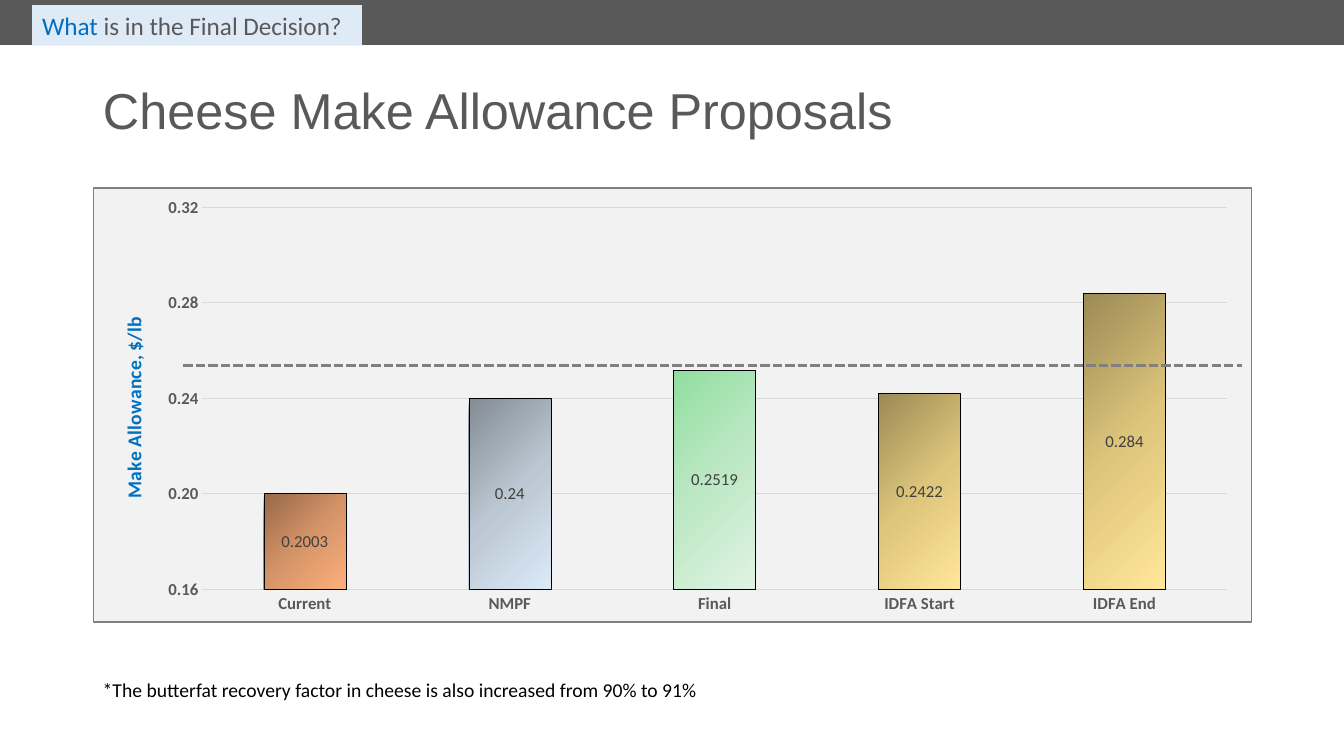
from dataclasses import dataclass

from lxml.etree import SubElement
from pptx import Presentation
from pptx.chart.data import CategoryChartData
from pptx.dml.color import RGBColor
from pptx.enum.chart import XL_CHART_TYPE as ChartType, XL_LABEL_POSITION as LabelPos
from pptx.enum.chart import XL_TICK_MARK as Tick
from pptx.enum.dml import MSO_LINE as Dash
from pptx.enum.shapes import MSO_CONNECTOR as Connector, MSO_SHAPE as Shape
from pptx.enum.text import MSO_ANCHOR as Anchor, PP_ALIGN as Align
from pptx.oxml import parse_xml
from pptx.oxml.ns import nsdecls, qn
from pptx.util import Cm, Pt

GREY, BLUE, BLACK = "595959", "0070C0", "000000"
RULE, BORDER = "D9D9D9", "808080"
LEFT, WIDTH = 2.34, 29.21
GOLD = ("9C8A56", "DDC57B", "FFE699")


@dataclass
class Proposal:
    name: str
    value: float
    shades: tuple[str, str, str]


@dataclass
class Run:
    text: str
    size: int
    color: str
    font: str = "Calibri"


@dataclass
class Label:
    box: tuple[float, float, float, float]
    runs: list[Run]
    fill: str = ""


PROPOSALS = [
    Proposal("Current", 0.2003, ("966849", "D59468", "FDAF7B")),
    Proposal("NMPF", 0.24, ("838B93", "BAC6D1", "DCEBF8")),
    Proposal("Final", 0.2519, ("91DEA0", "BDE8C5", "DFF3E3")),
    Proposal("IDFA Start", 0.2422, GOLD),
    Proposal("IDFA End", 0.284, GOLD),
]
LABELS = [
    Label((LEFT, 16.97, 15.52, 0.86),
          [Run("*The butterfat recovery factor in cheese is also increased from 90% to 91%", 14, BLACK)]),
    Label((0.81, 0.13, 8.31, 1.02),
          [Run("What ", 18, BLUE), Run("is in the Final Decision?", 18, GREY)], "DEEBF7"),
]


def rgb(color: str) -> RGBColor:
    return RGBColor.from_string(color)


def lengths(*values: float) -> list[Cm]:
    return [Cm(v) for v in values]


def style_font(font, size: int, color: str, name: str = "Calibri", bold: bool = False) -> None:
    for key, value in {"size": Pt(size), "name": name, "bold": bold}.items():
        setattr(font, key, value)
    font.color.rgb = rgb(color)


def style_line(line, color: str, width: float) -> None:
    line.color.rgb = rgb(color)
    line.width = Pt(width)


def add_runs(p, runs: list[Run]) -> None:
    for run in runs:
        r = p.add_run()
        r.text = run.text
        style_font(r.font, run.size, run.color, run.font)


def add_label(s, label: Label) -> None:
    sp = s.shapes.add_textbox(*lengths(*label.box))
    if label.fill:
        sp.fill.solid()
        sp.fill.fore_color.rgb = rgb(label.fill)
    sp.text_frame.word_wrap = False
    add_runs(sp.text_frame.paragraphs[0], label.runs)


def set_layout(parent, index: int, **places: float) -> None:
    """Place a chart part by fractions of the chart's size."""
    for old in parent.findall(qn("c:layout")):
        parent.remove(old)
    layout = parse_xml(f"<c:layout {nsdecls('c')}/>")
    manual = SubElement(layout, qn("c:manualLayout"))
    if "w" in places:
        SubElement(manual, qn("c:layoutTarget")).set("val", "inner")
    for key in ("x", "y"):
        SubElement(manual, qn(f"c:{key}Mode")).set("val", "edge")
    for key, value in places.items():
        SubElement(manual, qn(f"c:{key}")).set("val", str(value))
    parent.insert(index, layout)


def shade_point(point, shades: tuple[str, str, str]) -> None:
    style_line(point.format.line, BLACK, 0.25)
    stops = "".join(f'<a:gs pos="{i * 50000}"><a:srgbClr val="{c}"/></a:gs>'
                    for i, c in enumerate(shades))
    grad = parse_xml(f'<a:gradFill {nsdecls("a")}><a:gsLst>{stops}</a:gsLst>'
                     '<a:lin ang="2700000" scaled="0"/></a:gradFill>')
    point.format.line._get_or_add_ln().addprevious(grad)


def style_axes(chart) -> None:
    value_axis, cat_axis = chart.value_axis, chart.category_axis
    for axis in (value_axis, cat_axis):
        axis.major_tick_mark = axis.minor_tick_mark = Tick.NONE
        style_font(axis.tick_labels.font, 12, GREY, bold=True)
    style_line(cat_axis.format.line, RULE, 0.75)
    value_axis.format.line.fill.background()
    scale = {"minimum_scale": 0.16, "maximum_scale": 0.32, "major_unit": 0.04}
    for key, value in scale.items():
        setattr(value_axis, key, value)
    style_line(value_axis.major_gridlines.format.line, RULE, 0.75)
    value_axis.tick_labels.number_format = "#,##0.00"
    value_axis.tick_labels.number_format_is_linked = False

    title = value_axis.axis_title
    p = title.text_frame.paragraphs[0]
    add_runs(p, [Run("Make Allowance, $/lb", 14, BLUE)])
    p.runs[0].font.bold = True
    body = title.text_frame._txBody.find(qn("a:bodyPr"))
    body.set("rot", "-5400000")
    body.set("vert", "horz")
    set_layout(title._element, 1, x=0.02, y=0.29)


def add_allowance_chart(s) -> None:
    data = CategoryChartData()
    data.categories = [item.name for item in PROPOSALS]
    data.add_series("Series 1", [item.value for item in PROPOSALS])
    box = lengths(LEFT, 4.72, WIDTH, 10.97)
    chart = s.shapes.add_chart(ChartType.COLUMN_CLUSTERED, *box, data).chart
    chart.has_legend = chart.has_title = False
    style_font(chart.font, 10, BLACK)
    style_axes(chart)

    # Columns and their values
    plot = chart.plots[0]
    plot.gap_width, plot.vary_by_categories = 150, False
    series = plot.series[0]
    series.format.fill.solid()
    series.format.fill.fore_color.rgb = rgb("4472C4")
    for i, item in enumerate(PROPOSALS):
        shade_point(series.points[i], item.shades)
    labels = series.data_labels
    labels.show_value, labels.position = True, LabelPos.CENTER
    style_font(labels.font, 12, "404040")

    # Chart background, border and plot position
    space = chart._chartSpace
    frame = parse_xml(
        f'<c:spPr {nsdecls("c", "a")}><a:solidFill><a:srgbClr val="F2F2F2"/></a:solidFill>'
        f'<a:ln w="12700"><a:solidFill><a:srgbClr val="{BORDER}"/></a:solidFill></a:ln></c:spPr>')
    space.find(qn("c:chart")).addnext(frame)
    set_layout(space.find(f".//{qn('c:plotArea')}"), 0, x=0.094, y=0.045, w=0.885, h=0.88)


def main() -> None:
    prs = Presentation()
    prs.slide_width, prs.slide_height = lengths(33.87, 19.05)
    s = prs.slides.add_slide(prs.slide_layouts[5])

    # Top band
    band = s.shapes.add_shape(Shape.RECTANGLE, *lengths(0, 0, 33.87, 1.13))
    band.shadow.inherit = False
    band.fill.solid()
    band.fill.fore_color.rgb = rgb(GREY)
    band.line.fill.background()

    # Title
    title = s.shapes.title
    place = zip(("left", "top", "width", "height"), lengths(LEFT, 1.02, WIDTH, 3.68))
    for key, value in place:
        setattr(title, key, value)
    title.text_frame.vertical_anchor = Anchor.MIDDLE
    p = title.text_frame.paragraphs[0]
    p.alignment, p.line_spacing = Align.LEFT, 0.9
    add_runs(p, [Run("Cheese Make Allowance Proposals", 36, GREY, "Arial")])

    # Chart and the dashed reference line
    add_allowance_chart(s)
    level = s.shapes.add_connector(Connector.STRAIGHT, *lengths(4.62, 9.22, 31.29, 9.22))
    style_line(level.line, BORDER, 2.25)
    level.line.dash_style = Dash.SQUARE_DOT
    SubElement(level._element.spPr, qn("a:effectLst"))

    # Footnote and section tag
    for label in LABELS:
        add_label(s, label)
    prs.save("out.pptx")


if __name__ == "__main__":
    main()
